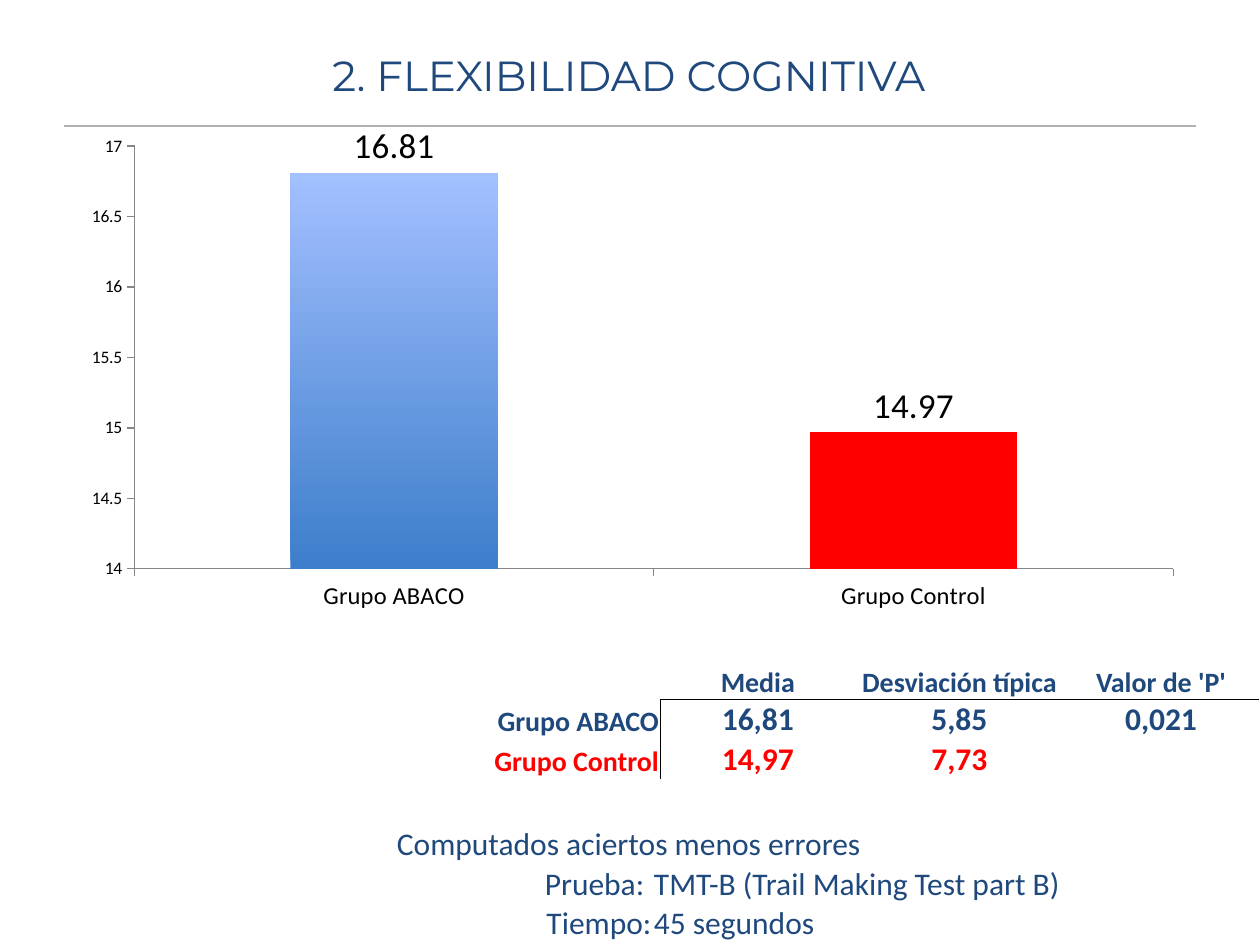
from lxml import etree
from pptx import Presentation
from pptx import util as u
from pptx.chart.data import CategoryChartData
from pptx.dml.color import RGBColor
from pptx.enum import chart as ch, shapes, text
from pptx.oxml import parse_xml
from pptx.oxml.ns import nsdecls, qn

NAVY = RGBColor(0x1F, 0x49, 0x7D)
RED = RGBColor(0xFF, 0, 0)
BLACK = RGBColor(0, 0, 0)
GREY = RGBColor(0x86, 0x86, 0x86)
RULE = RGBColor(0xB0, 0xB0, 0xB0)
BAR_BOTTOM = RGBColor(0x3D, 0x7E, 0xCB)
BAR_TOP = RGBColor(0xA3, 0xC0, 0xFF)
NO_GRID_STYLE = "{2D5ABB26-0587-4C30-8999-92F81FD0307C}"
LEFT, CENTER, RIGHT = text.PP_ALIGN.LEFT, text.PP_ALIGN.CENTER, text.PP_ALIGN.RIGHT

TITLE = "2. FLEXIBILIDAD COGNITIVA"
MEANS = {"Grupo ABACO": 16.81, "Grupo Control": 14.97}
RESULTS = [
    ["", "Media", "Desviación típica", "Valor de 'P'"],
    ["Grupo ABACO", "16,81", "5,85", "0,021"],
    ["Grupo Control", "14,97", "7,73", ""],
]
TEST_NOTES = [
    ["Computados aciertos menos errores", ""],
    ["Prueba: ", "TMT-B (Trail Making Test part B)"],
    ["Tiempo:", "45 segundos"],
]


def add_plain_table(slide, rows, left, top, widths, heights):
    frame = slide.shapes.add_table(len(rows), len(widths), u.Inches(left), u.Inches(top),
                                   u.Inches(sum(widths)), u.Inches(sum(heights)))
    table = frame.table
    table.first_row = table.horz_banding = False
    table._tbl.tblPr.find(qn("a:tableStyleId")).text = NO_GRID_STYLE
    for column, width in zip(table.columns, widths):
        column.width = u.Inches(width)
    for row, height in zip(table.rows, heights):
        row.height = u.Inches(height)
    return table


def fill_cell(cell, words, size, color, alignment, bold=False, borders=""):
    """Write one cell; borders holds the sides to rule, the others stay bare."""
    cell.margin_left = cell.margin_right = cell.margin_top = u.Inches(0.01)
    cell.margin_bottom = 0
    cell.vertical_anchor = text.MSO_ANCHOR.BOTTOM
    ink = f'<a:solidFill><a:srgbClr val="{BLACK}"/></a:solidFill>'
    for side in "LRTB":
        cell._tc.get_or_add_tcPr().append(parse_xml(
            f'<a:ln{side} {nsdecls("a")} w="6350">'
            f'{ink if side in borders else "<a:noFill/>"}</a:ln{side}>'))
    cell.fill.background()
    paragraph = cell.text_frame.paragraphs[0]
    paragraph.alignment = alignment
    if not words:
        etree.SubElement(paragraph._p, qn("a:endParaRPr"), sz=str(size * 100))
        return
    paragraph.text = words
    font = paragraph.runs[0].font
    font.name, font.size, font.bold = "Calibri", u.Pt(size), bold
    font.color.rgb = color


def add_title(slide):
    title = slide.shapes.title
    title.left, title.top = u.Inches(0.49), u.Inches(0.29)
    title.width, title.height = u.Inches(9), u.Inches(0.61)
    title.text_frame.text = TITLE
    title.text_frame.vertical_anchor = text.MSO_ANCHOR.MIDDLE
    paragraph = title.text_frame.paragraphs[0]
    paragraph.alignment = CENTER
    font = paragraph.runs[0].font
    font.name, font.size = "Montserrat", u.Pt(24)
    font.color.rgb = NAVY

    rule = slide.shapes.add_connector(shapes.MSO_CONNECTOR.STRAIGHT, u.Inches(0.51),
                                      u.Inches(1), u.Inches(9.49), u.Inches(1))
    rule.line.color.rgb = RULE
    rule.line.width = u.Pt(0.75)
    etree.SubElement(rule._element.spPr, qn("a:effectLst"))


def add_means_chart(slide):
    data = CategoryChartData()
    data.categories = list(MEANS)
    data.add_series("Series 1", list(MEANS.values()))
    chart = slide.shapes.add_chart(ch.XL_CHART_TYPE.COLUMN_CLUSTERED, u.Inches(0.55),
                                   u.Inches(0.99), u.Inches(8.94), u.Inches(3.94), data).chart
    chart.has_legend = chart.has_title = False
    chart.font.name, chart.font.size = "Calibri", u.Pt(10)
    chart.font.color.rgb = BLACK

    values, categories = chart.value_axis, chart.category_axis
    values.minimum_scale, values.maximum_scale, values.major_unit = 14, 17, 0.5
    values.has_major_gridlines = False
    values.tick_labels.number_format = "General"
    values.tick_labels.number_format_is_linked = False
    categories.tick_labels.font.size = u.Pt(14)
    for axis in (values, categories):
        axis.major_tick_mark = ch.XL_TICK_MARK.OUTSIDE
        axis.format.line.color.rgb = GREY

    plot = chart.plots[0]
    plot.gap_width = 150
    plot.vary_by_categories = False
    plot.has_data_labels = True
    labels = plot.data_labels
    labels.show_value = True
    labels.position = ch.XL_LABEL_POSITION.OUTSIDE_END
    labels.font.size = u.Pt(20)

    first, second = (plot.series[0].points[i].format.fill for i in range(2))
    first.gradient()
    first.gradient_angle = 90
    for stop, color in zip(first.gradient_stops, (BAR_BOTTOM, BAR_TOP)):
        stop.color.rgb = color
    second.solid()
    second.fore_color.rgb = RED


def add_notes_table(slide):
    table = add_plain_table(slide, TEST_NOTES, 3.14, 6.54, [2.04, 4.82], [0.31] * 3)
    table.cell(0, 0).merge(table.cell(0, 1))
    for r, row in enumerate(TEST_NOTES):
        for c, words in enumerate(row):
            alignment = RIGHT if r and c == 0 else LEFT
            fill_cell(table.cell(r, c), words, 18, NAVY, alignment)


def add_results_table(slide):
    table = add_plain_table(slide, RESULTS, 1, 5.27, [4.24, 1.55, 1.65, 1.55],
                            [0.28, 0.31, 0.31])
    for r, row in enumerate(RESULTS):
        for c, words in enumerate(row):
            borders = ("L" if r and c == 1 else "") + ("R" if r and c == 0 else "")
            borders += ("T" if r == 1 and c else "") + ("B" if r == 0 and c else "")
            fill_cell(table.cell(r, c), words, 18 if r and c else 16,
                      RED if r == 2 else NAVY, CENTER if c else RIGHT, True, borders)


def main():
    presentation = Presentation()
    presentation.slide_width, presentation.slide_height = u.Inches(10), u.Inches(7.5)
    slide = presentation.slides.add_slide(presentation.slide_layouts[5])
    add_title(slide)
    add_notes_table(slide)
    add_results_table(slide)
    add_means_chart(slide)
    presentation.save("out.pptx")


if __name__ == "__main__":
    main()
